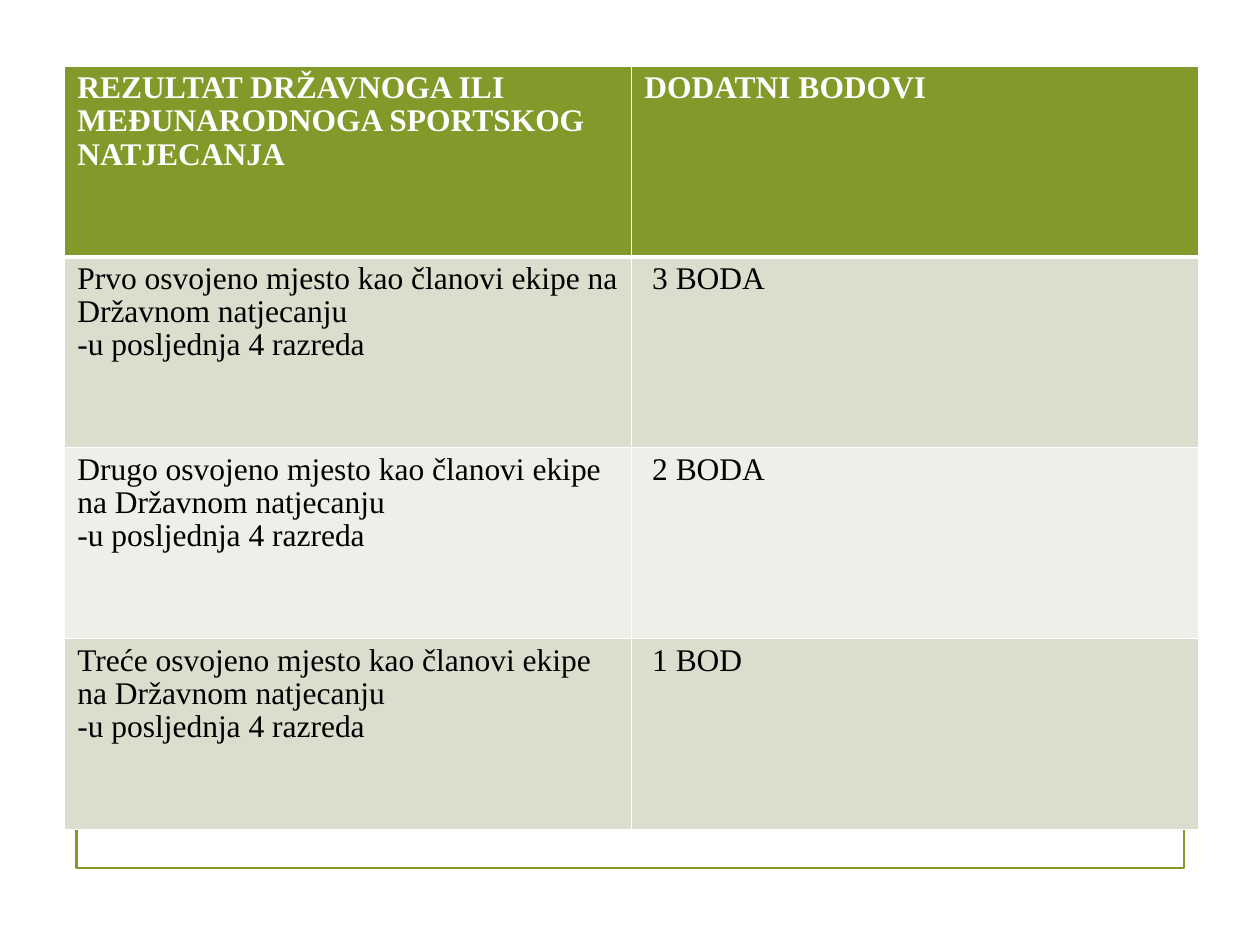
from pptx import Presentation
from pptx.dml.color import RGBColor
from pptx.enum.shapes import MSO_SHAPE
from pptx.oxml import parse_xml
from pptx.oxml.ns import nsdecls
from pptx.util import Pt

COLORS = {
    "green": "83992A",
    "dark": "D9DECD",
    "light": "EDEFE8",
    "white": "FFFFFF",
    "black": "000000",
}
STAGE = "-u posljednja 4 razreda"
PLACES = [("Prvo", "3 BODA"), ("Drugo", "2 BODA"), ("Treće", "1 BOD")]


def shade(name):
    return RGBColor.from_string(COLORS[name])


def write(frame, lines, font="Times New Roman", size=18, color="black",
          bold=False, space=0.95):
    frame.word_wrap = True
    frame.text = "\n".join(lines)
    for para in frame.paragraphs:
        para.line_spacing = space
        for run in para.runs:
            run.font.name = font
            run.font.size = Pt(size)
            run.font.bold = bold
            run.font.color.rgb = shade(color)


class Deck:
    def __init__(self, width, height):
        self.show = Presentation()
        self.show.slide_width = Pt(width)
        self.show.slide_height = Pt(height)
        self.slide = self.show.slides.add_slide(self.show.slide_layouts[6])

    def frame(self, left, top, width, height, line=1.25):
        box = self.slide.shapes.add_shape(
            MSO_SHAPE.RECTANGLE, Pt(left), Pt(top), Pt(width), Pt(height))
        box.shadow.inherit = False
        box.fill.background()
        box.line.color.rgb = shade("green")
        box.line.width = Pt(line)

    def border(self, cell, **widths):
        props = cell._tc.get_or_add_tcPr()
        for spot, (side, width) in enumerate(widths.items()):
            props.insert(spot, parse_xml(
                f'<a:ln{side} {nsdecls("a")} w="{Pt(width)}"><a:solidFill>'
                f'<a:srgbClr val="{COLORS["white"]}"/></a:solidFill></a:ln{side}>'))

    def table(self, rows, left, top, width, height):
        count = len(rows)
        grid = self.slide.shapes.add_table(
            count, len(rows[0]), Pt(left), Pt(top), Pt(width), Pt(height)).table
        for r, row in enumerate(rows):
            grid.rows[r].height = Pt(height / count)
            head = r == 0
            fill = "green" if head else "dark" if r % 2 else "light"
            for c, lines in enumerate(row):
                cell = grid.cell(r, c)
                cell.fill.solid()
                cell.fill.fore_color.rgb = shade(fill)
                self.border(cell, L=1, R=1, T=3 if r == 1 else 1,
                            B=3 if head else 1)
                if c and not head:
                    cell.margin_left = Pt(11.7)
                write(cell.text_frame, lines, bold=head,
                      color="white" if head else "black")

    def save(self):
        self.show.save("out.pptx")


def main():
    rows = [(["REZULTAT DRŽAVNOGA ILI MEĐUNARODNOGA SPORTSKOG NATJECANJA"],
             ["DODATNI BODOVI"])]
    for place, score in PLACES:
        text = f"{place} osvojeno mjesto kao članovi ekipe na Državnom natjecanju"
        rows.append(([text, STAGE], [score]))
    deck = Deck(720, 540)
    deck.frame(43.7, 42.5, 633, 453.5)
    deck.table(rows, 37, 37.7, 648, 436.4)
    deck.save()


if __name__ == "__main__":
    main()
